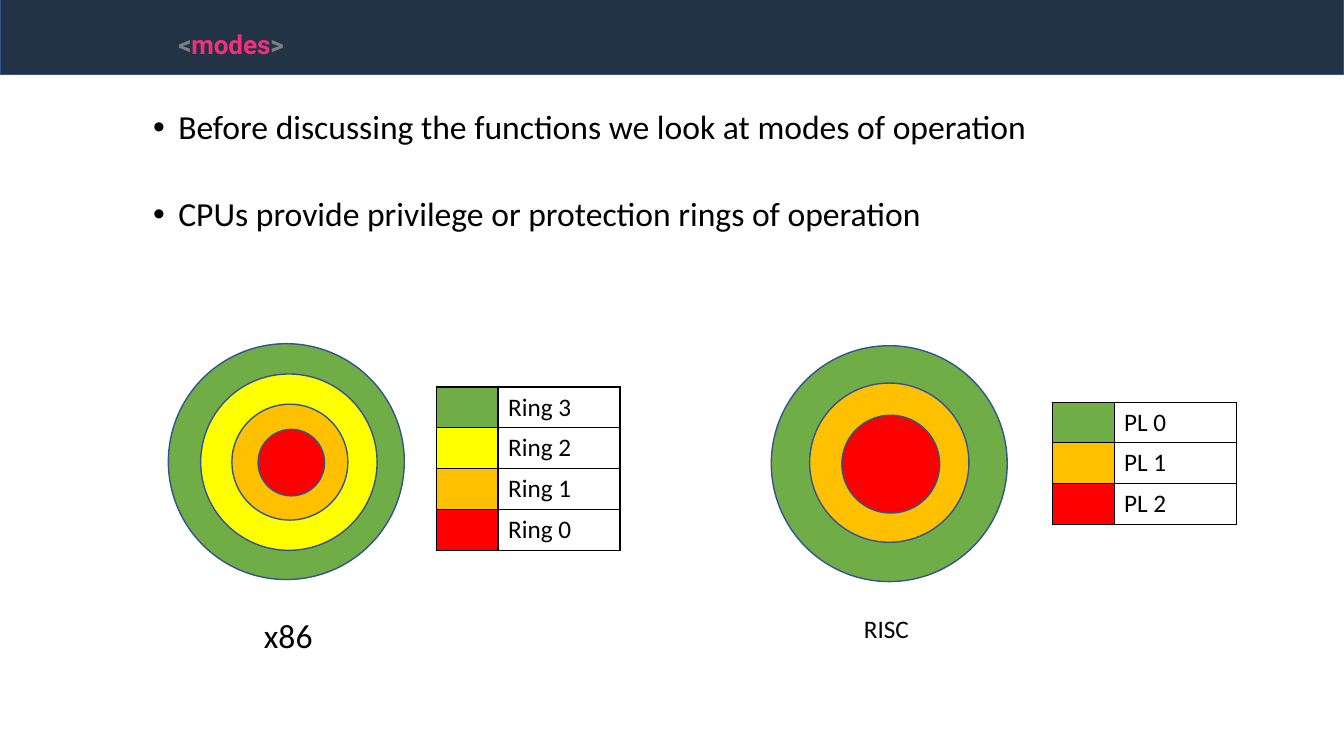
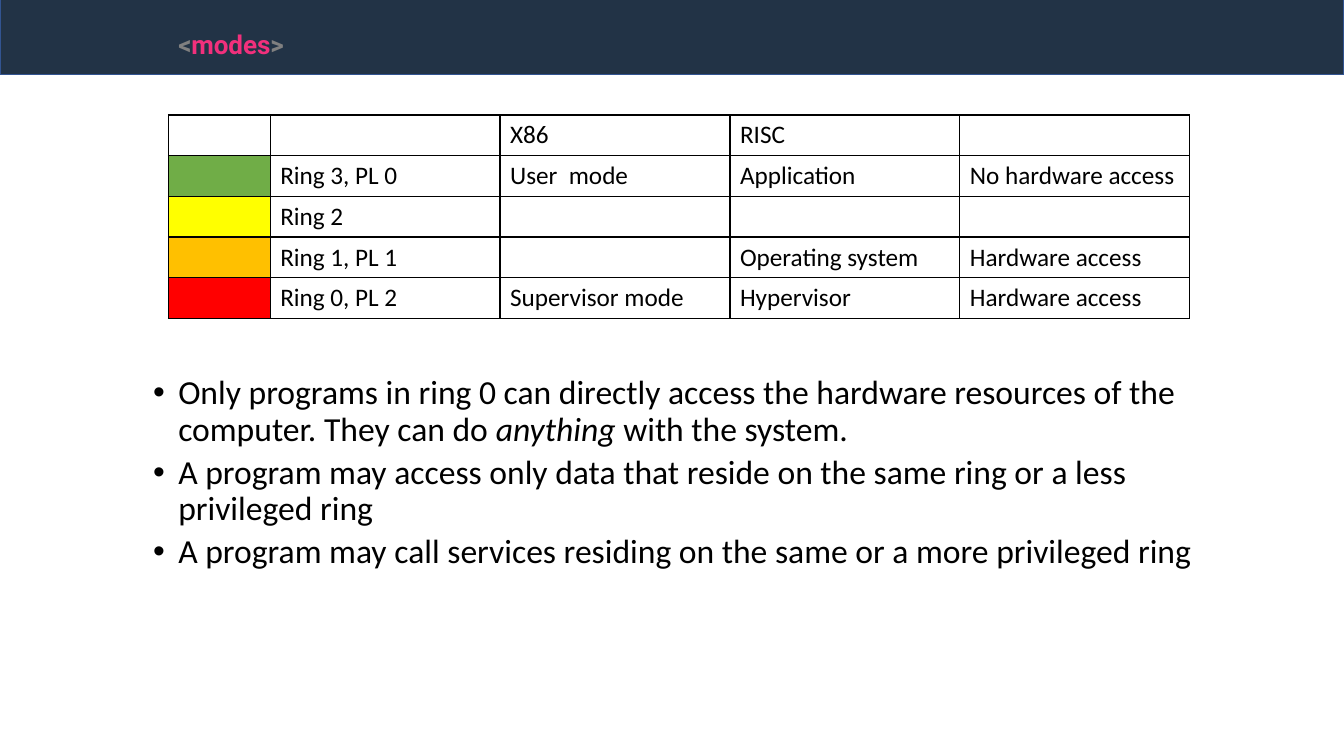
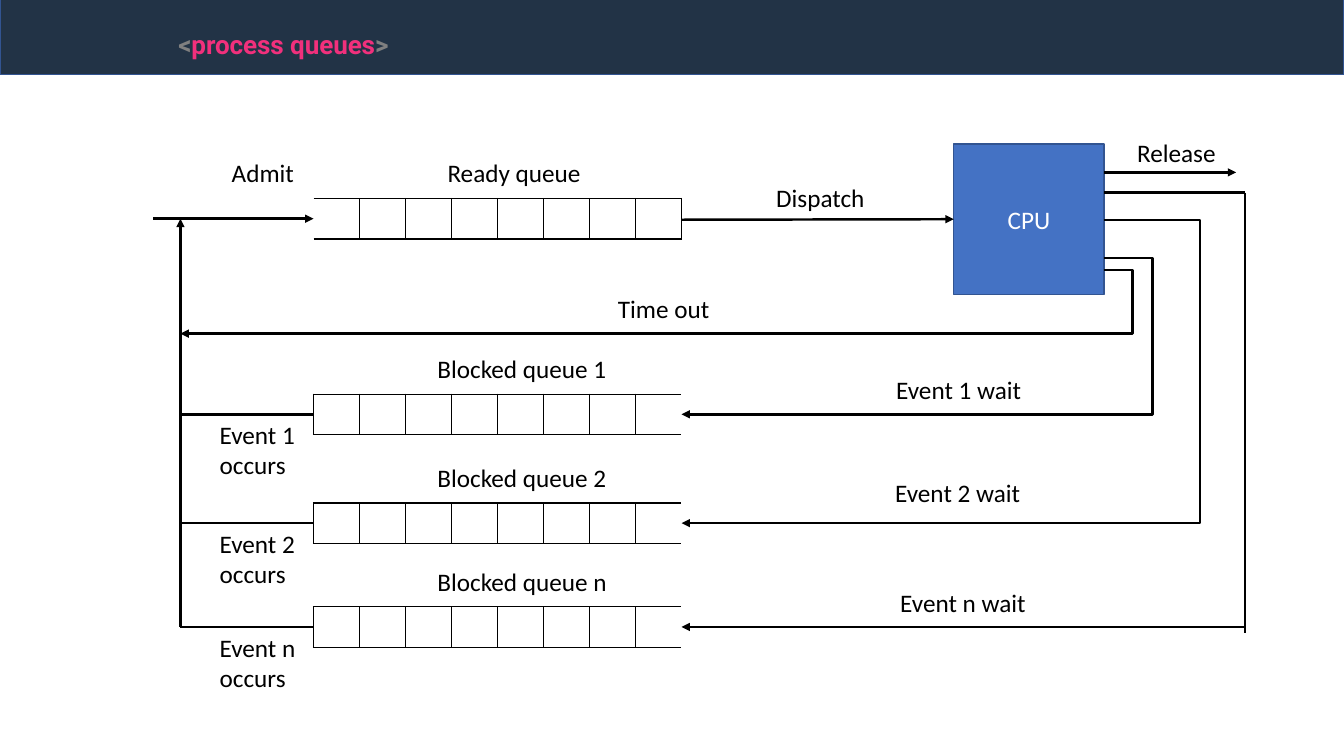
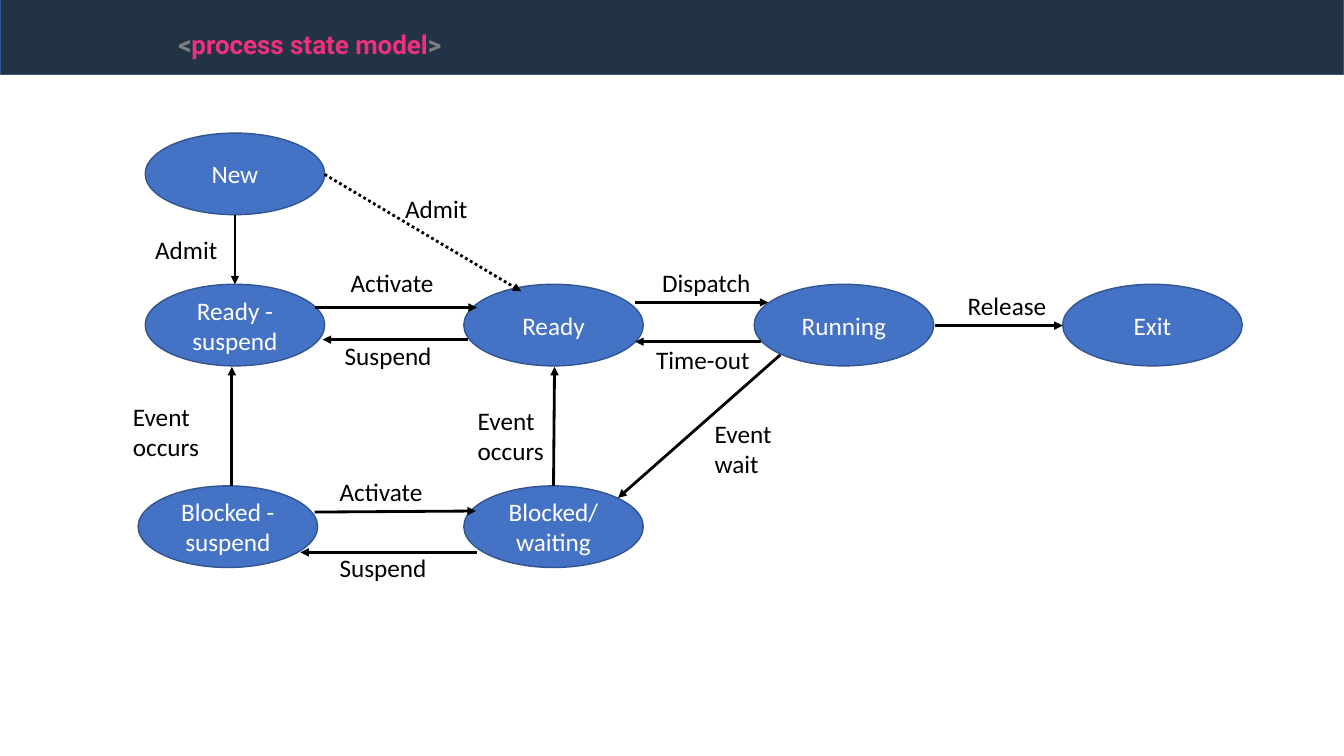
from lxml import etree
from pptx import Presentation
from pptx import util as u
from pptx.dml.color import RGBColor
from pptx.enum import dml, shapes, text
from pptx.oxml import ns

NAVY = RGBColor(0x22, 0x33, 0x46)
OUTLINE = RGBColor(0x32, 0x54, 0x91)
BLUE = RGBColor(0x44, 0x72, 0xC4)
GREEN = RGBColor(0x70, 0xAD, 0x47)
YELLOW = RGBColor(0xFF, 0xFF, 0x00)
ORANGE = RGBColor(0xFF, 0xC0, 0x00)
RED = RGBColor(0xFF, 0x00, 0x00)
PINK = RGBColor(0xF1, 0x30, 0x7C)
GRAY = RGBColor(0x80, 0x80, 0x80)
BLACK = RGBColor(0x00, 0x00, 0x00)
WHITE = RGBColor(0xFF, 0xFF, 0xFF)

RECT = shapes.MSO_SHAPE.RECTANGLE
OVAL = shapes.MSO_SHAPE.OVAL


def sub(parent, tag, **attrs):
    return etree.SubElement(parent, ns.qn(tag), attrs)


def inches(*values):
    return [u.Inches(v) for v in values]


class Deck:
    FONT = "Calibri"
    SIZE = 18

    def __init__(self):
        self.prs = Presentation()
        self.prs.slide_width, self.prs.slide_height = inches(13.33, 7.5)
        self.s = None

    def slide(self, title, title_w):
        """Start a slide with the header band and its tag-like title."""
        self.s = self.prs.slides.add_slide(self.prs.slide_layouts[6])
        self.shape(RECT, (0, -0.04, 13.33, 0.78), NAVY)
        tf = self.s.shapes.add_textbox(*inches(1.67, 0.18, title_w, 0.64)).text_frame
        tf.word_wrap = False
        tf.auto_size = text.MSO_AUTO_SIZE.SHAPE_TO_FIT_TEXT
        p = tf.paragraphs[0]
        p.font.name, p.font.size, p.font.bold = "Roboto", u.Pt(32), True
        for part, color in (("<", GRAY), (title, PINK), (">", GRAY)):
            r = p.add_run()
            r.text = part
            r.font.color.rgb = color
            r._r.get_or_add_rPr().set("baseline", "30000")

    def style(self, p, size=SIZE, color=BLACK):
        p.font.name, p.font.size = self.FONT, u.Pt(size)
        p.font.color.rgb = color

    def shape(self, kind, at, fill, label=""):
        sp = self.s.shapes.add_shape(kind, *inches(*at))
        sp.shadow.inherit = False
        sp.fill.solid()
        sp.fill.fore_color.rgb = fill
        sp.line.color.rgb = OUTLINE
        sp.line.width = u.Pt(1)
        if label:
            tf = sp.text_frame
            tf.text = label
            tf.vertical_anchor = text.MSO_ANCHOR.MIDDLE
            for p in tf.paragraphs:
                p.alignment = text.PP_ALIGN.CENTER
                self.style(p, color=WHITE)
        return sp

    def label(self, words, x, y, w, h=0.4, size=SIZE):
        tf = self.s.shapes.add_textbox(*inches(x, y, w, h)).text_frame
        tf.word_wrap = True
        tf.text = words
        self.style(tf.paragraphs[0], size)

    def bullets(self, y, h, lines, gap):
        """Bulleted body text; words between asterisks are italic."""
        tf = self.s.shapes.add_textbox(*inches(0.92, y, 11.5, h)).text_frame
        tf.word_wrap = True
        for i, line in enumerate(lines):
            p = tf.add_paragraph() if i else tf.paragraphs[0]
            pPr = p._p.get_or_add_pPr()
            pPr.set("marL", str(u.Inches(0.75)))
            pPr.set("indent", str(u.Inches(-0.25)))
            sub(pPr, "a:buFont", typeface="Arial")
            sub(pPr, "a:buChar", char="•")
            p.line_spacing = 0.9
            p.space_before = u.Pt(gap if i else 0)
            self.style(p, 24)
            for n, part in enumerate(line.split("*")):
                r = p.add_run()
                r.text = part
                if n % 2:
                    r.font.italic = True

    def table(self, x, y, h, widths, rows, open_side=None):
        """Ruled table; a colour as cell value fills the cell.

        open_side "L" or "R" leaves that outer edge undrawn.
        """
        tbl = self.s.shapes.add_table(
            len(rows), len(widths), *inches(x, y, sum(widths), h)).table
        tbl.first_row = tbl.horz_banding = False
        for col, w in zip(tbl.columns, widths):
            col.width = u.Inches(w)
        open_col = {"L": 0, "R": len(widths) - 1}.get(open_side)
        for i, row in enumerate(rows):
            tbl.rows[i].height = u.Inches(h / len(rows))
            for j, value in enumerate(row):
                cell = tbl.cell(i, j)
                self.borders(cell, open_side if j == open_col else None)
                if isinstance(value, RGBColor):
                    cell.fill.solid()
                    cell.fill.fore_color.rgb = value
                else:
                    cell.fill.background()
                    cell.text = value
                self.style(cell.text_frame.paragraphs[0])

    def borders(self, cell, open_side):
        tcPr = cell._tc.get_or_add_tcPr()
        for side in "LRTB":
            ln = sub(tcPr, f"a:ln{side}", w=str(u.Pt(1)))
            if side == open_side:
                sub(ln, "a:noFill")
            else:
                sub(sub(ln, "a:solidFill"), "a:srgbClr", val=str(BLACK))

    def line(self, x1, y1, x2, y2, width=1.75, arrow=True, via_x=None, dash=None):
        """Straight line, or an elbow whose upright runs at via_x."""
        kind = shapes.MSO_CONNECTOR.STRAIGHT if via_x is None else shapes.MSO_CONNECTOR.ELBOW
        c = self.s.shapes.add_connector(kind, *inches(x1, y1, x2, y2))
        c.line.color.rgb = BLACK
        c.line.width = u.Pt(width)
        if dash:
            c.line.dash_style = dash
        spPr = c._element.spPr
        if via_x is not None:
            adj = round((via_x - x1) / (x2 - x1) * 100000)
            sub(spPr.find(ns.qn("a:prstGeom")).get_or_add_avLst(), "a:gd",
                name="adj1", fmla=f"val {adj}")
        if arrow:
            sub(c.line._get_or_add_ln(), "a:tailEnd", type="triangle")
        sub(spPr, "a:effectLst")
        return c


def ring_modes(d):
    d.slide("modes", 1.34)
    d.bullets(1.05, 5.76, [
        "Before discussing the functions we look at modes of operation",
        "CPUs provide privilege or protection rings of operation"], gap=36)
    # Rings, outermost first: left, top, diameter
    for x, y, size, color in (
            (1.67, 3.41, 2.34, GREEN), (1.99, 3.71, 1.75, YELLOW),
            (2.3, 4.01, 1.15, ORANGE), (2.56, 4.26, 0.66, RED),
            (7.65, 3.43, 2.34, GREEN), (8.03, 3.8, 1.58, ORANGE),
            (8.35, 4.12, 0.97, RED)):
        d.shape(OVAL, (x, y, size, size), color)
    d.label("x86", 2.52, 6.05, 0.73, 0.5, size=24)
    d.label("RISC", 8.47, 6.04, 0.81)
    # Legends
    widths = [0.61, 1.21]
    d.table(4.33, 3.84, 1.62, widths, [
        (GREEN, "Ring 3"), (YELLOW, "Ring 2"), (ORANGE, "Ring 1"), (RED, "Ring 0")])
    d.table(10.44, 3.99, 1.21, widths, [
        (GREEN, "PL 0"), (ORANGE, "PL 1"), (RED, "PL 2")])


def mode_table(d):
    d.slide("modes", 1.34)
    d.table(1.67, 1.14, 2.02, [1.01] + [2.28] * 4, [
        ("", "", "X86", "RISC", ""),
        (GREEN, "Ring 3, PL 0", "User  mode", "Application", "No hardware access"),
        (YELLOW, "Ring 2", "", "", ""),
        (ORANGE, "Ring 1, PL 1", "", "Operating system", "Hardware access"),
        (RED, "Ring 0, PL 2", "Supervisor mode", "Hypervisor", "Hardware access")])
    d.bullets(3.68, 3.13, [
        "Only programs in ring 0 can directly access the hardware resources of the "
        "computer. They can do *anything* with the system.",
        "A program may access only data that reside on the same ring or a less "
        "privileged ring",
        "A program may call services residing on the same or a more privileged ring",
    ], gap=5)


def process_queues(d):
    d.slide("process queues", 2.41)
    left, right, spine, cpu_right = 3.11, 6.76, 1.79, 10.95
    slots, queue_h = 8, 0.4
    widths = [(right - left) / slots] * slots

    # Ready queue and CPU
    d.table(left, 1.97, queue_h, widths, [[""] * slots], open_side="L")
    cpu = d.shape(RECT, (9.46, 1.43, 1.49, 1.49), BLUE, "CPU")
    d.line(1.52, 2.17, left, 2.17)
    d.line(right, 2.18, 9.46, 2.18).end_connect(cpu, 1)
    d.line(cpu_right, 1.71, 12.26, 1.71)
    d.line(cpu_right, 2.68, spine, 3.31, via_x=11.23)

    # Blocked queues, each returning to the spine
    for name, y, wait_x, wait_y in (
            ("1", 3.91, 8.79, 3.66), ("2", 4.99, 8.78, 4.69), ("n", 6.02, 8.83, 5.78)):
        middle = y + queue_h / 2
        d.table(left, y, queue_h, widths, [[""] * slots], open_side="R")
        d.line(left, middle, spine, middle, arrow=False)
        d.label(f"Blocked queue {name}", 4.24, y - 0.45, 2.06)
        d.label(f"Event {name} occurs", 2.08, middle, 1.03, 0.71)
        d.label(f"Event {name} wait", wait_x, wait_y, 1.7)
    d.line(spine, 6.22, spine, 2.17)

    # Waits from the CPU to the blocked queues
    d.line(cpu_right, 2.56, right, 4.11, via_x=11.43)
    d.line(cpu_right, 2.18, right, 5.19, via_x=11.9)
    d.line(cpu_right, 1.91, 12.35, 1.91, arrow=False)
    d.line(12.35, 1.91, 12.35, 6.28, arrow=False)
    d.line(12.35, 6.22, right, 6.22)

    for words, x, y, w in (
            ("Admit", 2.2, 1.51, 1.03), ("Ready queue", 4.34, 1.51, 1.75),
            ("Dispatch", 7.6, 1.76, 1.19), ("Time out", 6.03, 2.86, 1.32),
            ("Release", 11.18, 1.31, 1.03)):
        d.label(words, x, y, w)


def process_states(d):
    d.slide("process state model", 2.98)
    # States
    for name, x, y in (
            ("New", 1.44, 1.32), ("Ready - suspend", 1.44, 2.82), ("Ready", 4.6, 2.82),
            ("Running", 7.48, 2.82), ("Exit", 10.54, 2.82),
            ("Blocked - suspend", 1.37, 4.82), ("Blocked/\nwaiting", 4.6, 4.82)):
        d.shape(OVAL, (x, y, 1.78, 0.81), BLUE, name)
    # Transitions
    for ends in (
            (2.33, 2.13, 2.33, 2.82), (3.12, 3.05, 4.73, 3.05), (4.64, 3.37, 3.2, 3.37),
            (6.3, 3, 7.62, 3), (7.55, 3.39, 6.3, 3.39), (9.27, 3.23, 10.54, 3.23),
            (7.74, 3.52, 6.13, 4.94), (5.49, 4.82, 5.5, 3.64), (2.3, 4.82, 2.3, 3.64),
            (3.12, 5.08, 4.72, 5.07), (4.73, 5.48, 2.98, 5.48)):
        d.line(*ends, width=2)
    d.line(3.22, 1.73, 5.17, 2.89, width=2, dash=dml.MSO_LINE.ROUND_DOT)
    # Transition names
    for words, x, y in (
            ("Admit", 1.44, 2.28), ("Admit", 3.92, 1.87),
            ("Activate", 3.38, 2.6), ("Suspend", 3.32, 3.33),
            ("Activate", 3.27, 4.68), ("Suspend", 3.27, 5.43),
            ("Dispatch", 6.47, 2.6), ("Time-out", 6.41, 3.37), ("Release", 9.5, 2.83)):
        d.label(words, x, y, 1.14)
    for words, x, y in (
            ("Event occurs", 1.22, 3.93), ("Event occurs", 4.64, 3.97),
            ("Event wait", 6.99, 4.1)):
        d.label(words, x, y, 1.04, 0.71)


def main():
    d = Deck()
    for build in (ring_modes, mode_table, process_queues, process_states):
        build(d)
    d.prs.save("out.pptx")


if __name__ == "__main__":
    main()
